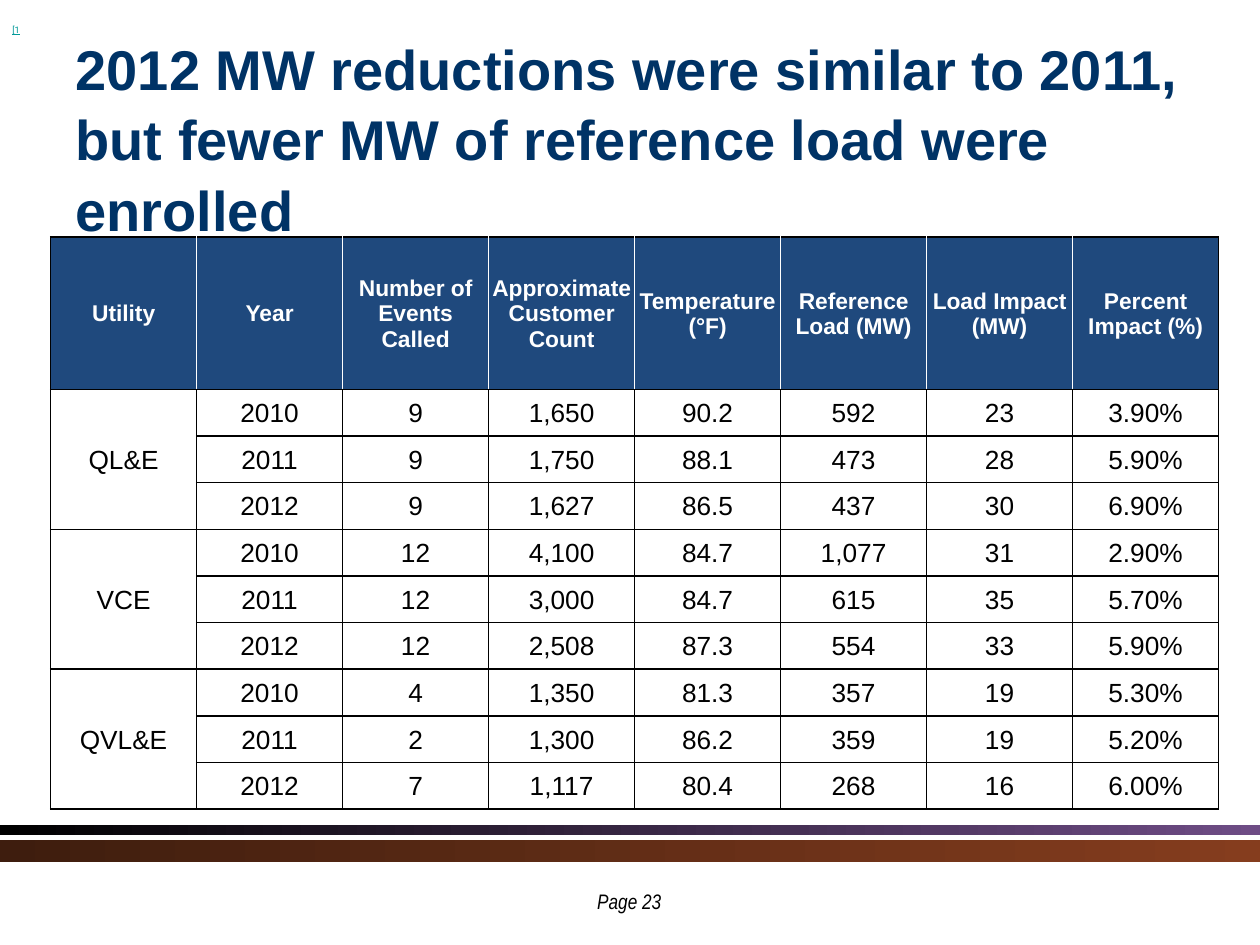
"""Build the slide comparing utility load impacts for 2010 to 2012."""
from lxml import etree
from pptx import Presentation
from pptx.dml.color import RGBColor
from pptx.enum.shapes import MSO_SHAPE
from pptx.enum.text import MSO_ANCHOR, MSO_AUTO_SIZE, PP_ALIGN
from pptx.oxml.ns import qn
from pptx.util import Cm, Pt

RECTANGLE = MSO_SHAPE.RECTANGLE
MIDDLE, TOP = MSO_ANCHOR.MIDDLE, MSO_ANCHOR.TOP
NO_AUTOFIT, GROW = MSO_AUTO_SIZE.NONE, MSO_AUTO_SIZE.SHAPE_TO_FIT_TEXT
LEFT, CENTER = PP_ALIGN.LEFT, PP_ALIGN.CENTER

COLORS = {
    "title": "003366", "header": "1F497D", "white": "FFFFFF", "black": "000000",
    "note": "009999", "purple": "6E4C85", "dark brown": "3E1D0E", "brown": "853D1E",
}
BANDS = [
    (16.64, 0.2, "black", "purple"),
    (16.94, 0.43, "dark brown", "brown"),
]
HEADERS = [
    "Utility", "Year", "Number of Events Called", "Approximate Customer Count",
    "Temperature (°F)", "Reference Load (MW)", "Load Impact (MW)", "Percent Impact (%)",
]
UTILITIES = {
    "QL&E": [
        ["2010", "9", "1,650", "90.2", "592", "23", "3.90%"],
        ["2011", "9", "1,750", "88.1", "473", "28", "5.90%"],
        ["2012", "9", "1,627", "86.5", "437", "30", "6.90%"],
    ],
    "VCE": [
        ["2010", "12", "4,100", "84.7", "1,077", "31", "2.90%"],
        ["2011", "12", "3,000", "84.7", "615", "35", "5.70%"],
        ["2012", "12", "2,508", "87.3", "554", "33", "5.90%"],
    ],
    "QVL&E": [
        ["2010", "4", "1,350", "81.3", "357", "19", "5.30%"],
        ["2011", "2", "1,300", "86.2", "359", "19", "5.20%"],
        ["2012", "7", "1,117", "80.4", "268", "16", "6.00%"],
    ],
}
TITLE_FORMAT = {"name": "Arial", "size": Pt(32), "bold": True}
PAGE_FORMAT = {"name": "Arial Narrow", "size": Pt(12), "italic": True}
NOTE_FORMAT = {"name": "Roboto", "size": Pt(9), "underline": True}
HEADER_FORMAT = {"name": "Arial", "size": Pt(13), "bold": True}
BODY_FORMAT = {"name": "Arial", "size": Pt(15), "bold": False}
CELL_FORMAT = {
    "margin_left": Cm(0.03), "margin_right": Cm(0.03), "margin_top": Cm(0.03),
    "margin_bottom": 0, "vertical_anchor": MIDDLE,
}


def write(text_frame, text, color, alignment, font_format):
    paragraph = text_frame.paragraphs[0]
    paragraph.alignment = alignment
    run = paragraph.add_run()
    run.text = text
    for name, value in font_format.items():
        setattr(run.font, name, value)
    run.font.color.rgb = RGBColor.from_string(COLORS[color])
    return run


def add_border(cell, side, color):
    line = etree.SubElement(cell._tc.get_or_add_tcPr(), qn(f"a:ln{side}"), w=str(Pt(1)))
    fill = etree.SubElement(line, qn("a:solidFill"))
    etree.SubElement(fill, qn("a:srgbClr"), val=COLORS[color])


presentation = Presentation()
presentation.slide_width, presentation.slide_height = Cm(25.4), Cm(19.05)
slide = presentation.slides.add_slide(presentation.slide_layouts[5])

for top, height, start, end in BANDS:
    band = slide.shapes.add_shape(RECTANGLE, 0, Cm(top), presentation.slide_width, Cm(height))
    band.shadow.inherit = False
    band.line.fill.background()
    band.fill.gradient()
    band.fill.gradient_angle = 0
    for stop, position, color in zip(band.fill.gradient_stops, (0, 1), (start, end)):
        stop.position = position
        stop.color.rgb = RGBColor.from_string(COLORS[color])

title = slide.shapes.title
title.left, title.top, title.width, title.height = Cm(1.27), Cm(0.76), Cm(22.86), Cm(3.99)
title.text_frame.auto_size = NO_AUTOFIT
title.text_frame.vertical_anchor = MIDDLE
write(
    title.text_frame,
    "2012 MW reductions were similar to 2011, but fewer MW of reference load were enrolled",
    "title", LEFT, TITLE_FORMAT,
)
title.text_frame.paragraphs[0].line_spacing = 1.05

page_box = slide.shapes.add_textbox(Cm(9.98), Cm(17.78), Cm(5.41), Cm(0.56))
page_box.text_frame.word_wrap = True
page_box.text_frame.vertical_anchor = TOP
write(page_box.text_frame, "Page 23", "black", CENTER, PAGE_FORMAT)

note_box = slide.shapes.add_textbox(0, Cm(0.33), Cm(0.71), Cm(0.64))
note_box.text_frame.word_wrap = False
note_box.text_frame.auto_size = GROW
note_box.text_frame.vertical_anchor = MIDDLE
note = write(note_box.text_frame, "[1", "note", LEFT, NOTE_FORMAT)
note.font._element.set("baseline", "30000")

rows = [HEADERS]
for utility, years in UTILITIES.items():
    rows += [[utility if index == 0 else "", *year] for index, year in enumerate(years)]
last_column = len(HEADERS) - 1

table = slide.shapes.add_table(
    len(rows), len(HEADERS), Cm(1.02), Cm(4.78), Cm(23.55), Cm(11.53)
).table
table.horz_banding = False
for column in table.columns:
    column.width = Cm(23.55) // len(HEADERS)

for row_index, values in enumerate(rows):
    is_header = row_index == 0
    table.rows[row_index].height = Cm(3.07 if is_header else 0.94)
    for column_index, value in enumerate(values):
        cell = table.cell(row_index, column_index)
        for name, setting in CELL_FORMAT.items():
            setattr(cell, name, setting)
        add_border(cell, "L", "white" if is_header and column_index > 0 else "black")
        add_border(cell, "R", "white" if is_header and column_index < last_column else "black")
        add_border(cell, "T", "black")
        add_border(cell, "B", "black")
        if is_header:
            cell.fill.solid()
            cell.fill.fore_color.rgb = RGBColor.from_string(COLORS["header"])
            write(cell.text_frame, value, "white", CENTER, HEADER_FORMAT)
        else:
            cell.fill.background()
            if value:
                write(cell.text_frame, value, "black", CENTER, BODY_FORMAT)

first_row = 1
for years in UTILITIES.values():
    next_row = first_row + len(years)
    table.cell(first_row, 0).merge(table.cell(next_row - 1, 0))
    first_row = next_row

presentation.save("out.pptx")
